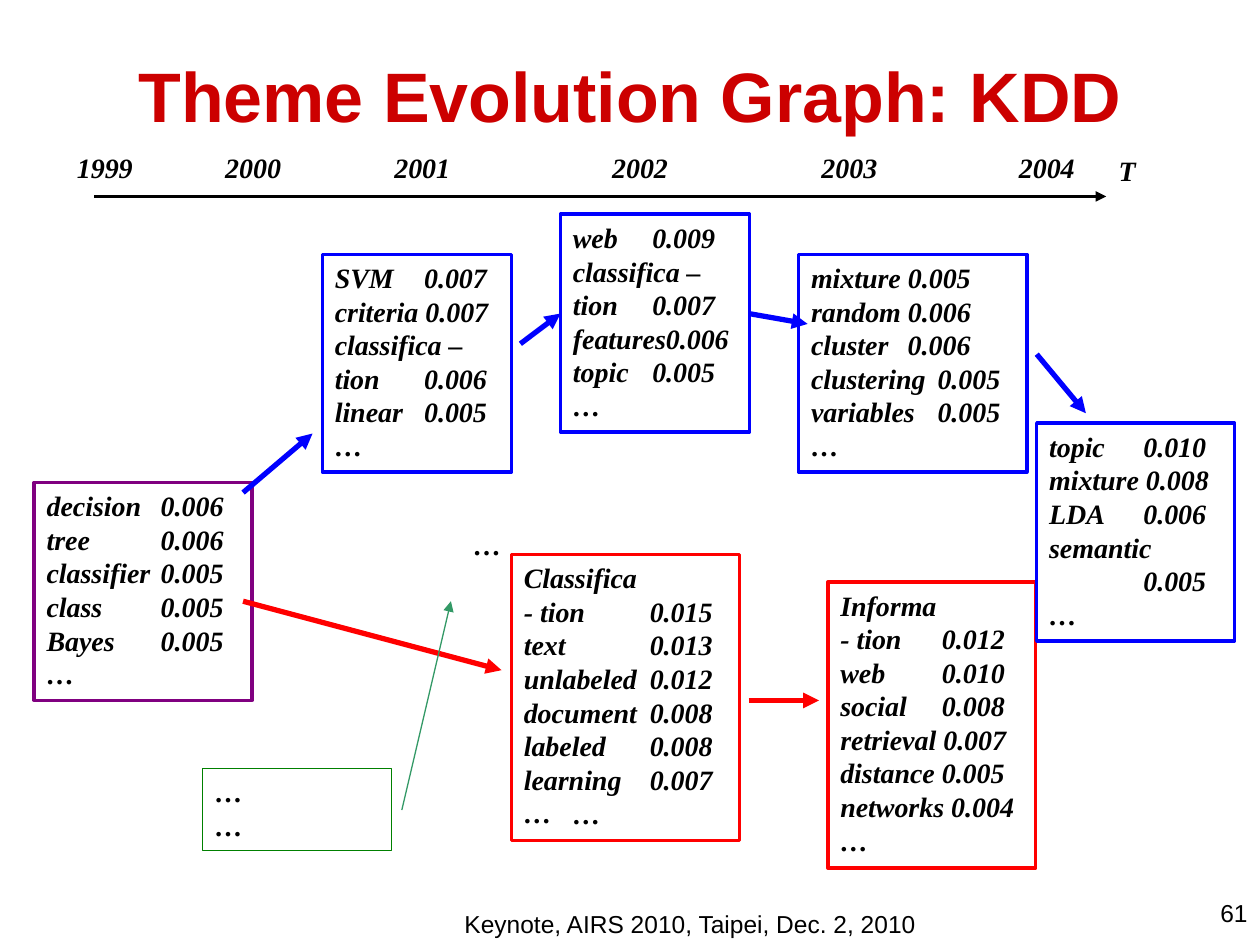
from dataclasses import dataclass

from lxml.etree import SubElement
from pptx import Presentation
from pptx.dml.color import RGBColor
from pptx.enum.shapes import MSO_CONNECTOR, MSO_SHAPE
from pptx.enum.text import MSO_ANCHOR, PP_ALIGN
from pptx.oxml.ns import qn
from pptx.util import Cm, Pt


@dataclass(frozen=True)
class Theme:
    sans: str = "Arial"
    serif: str = "Times New Roman"
    title_size: float = 40
    body_size: float = 16
    footer_size: float = 14
    leading: float = 19.2
    title: str = "CC0000"
    black: str = "000000"
    blue: str = "0000FF"
    purple: str = "800080"
    red: str = "FF0000"
    green: str = "008000"
    teal: str = "339966"


T = Theme()

# Year labels: text, left
YEARS = [("1999", 1.3), ("2000", 4.29), ("2001", 7.7),
         ("2002", 12.09), ("2003", 16.31), ("2004", 20.29)]

# Theme boxes: left, top, width, height, colour, line width, tab stops, text
THEMES = [
    (6.5, 5.13, 3.81, 4.39, T.blue, 2, [1.8],
     "SVM\t0.007\ncriteria 0.007\nclassifica – tion\t0.006\nlinear\t0.005\n…"),
    (0.69, 9.73, 4.39, 4.39, T.purple, 2, [2.3],
     "decision\t0.006\ntree\t0.006\nclassifier\t0.005\nclass\t0.005\nBayes\t0.005\n…"),
    (10.31, 11.18, 4.6, 5.77, T.red, 2, [2.54],
     "Classifica\n- tion\t0.015\ntext\t0.013\nunlabeled\t0.012\ndocument\t0.008\n"
     "labeled\t0.008\nlearning\t0.007\n…"),
    (16.69, 11.73, 4.19, 5.77, T.red, 2, [2.05],
     "Informa\n- tion\t0.012\nweb\t0.010\nsocial\t0.008\nretrieval 0.007\n"
     "distance 0.005\nnetworks 0.004\n…"),
    (4.09, 15.49, 3.81, 1.65, T.green, 0.75, [], "…\n…"),
    (11.3, 4.32, 3.81, 4.39, T.blue, 2, [1.6],
     "web\t0.009\nclassifica –tion\t0.007\nfeatures0.006\ntopic\t0.005\n…"),
    (16.1, 5.13, 4.6, 4.39, T.blue, 2, [1.95, 2.55],
     "mixture 0.005\nrandom 0.006\ncluster\t0.006\nclustering\t0.005\n"
     "variables\t0.005\n…"),
    (20.9, 8.53, 3.99, 4.39, T.blue, 2, [1.9],
     "topic\t0.010\nmixture 0.008\nLDA\t0.006\nsemantic\n\t0.005\n…"),
]

# Arrows: x1, y1, x2, y2, colour, width
ARROWS = [
    (1.9, 3.96, 22.3, 3.96, T.black, 2),
    (4.9, 9.93, 6.3, 8.74, T.blue, 3),
    (10.49, 6.93, 11.3, 6.32, T.blue, 3),
    (15.09, 6.32, 16.28, 6.53, T.blue, 3),
    (20.9, 7.14, 21.89, 8.33, T.blue, 3),
    (4.9, 12.12, 10.11, 13.51, T.red, 3),
    (15.09, 14.12, 16.51, 14.12, T.red, 3),
    (8.1, 16.33, 9.09, 12.12, T.teal, 0.75),
]


def rgb(value):
    return RGBColor.from_string(value)


def write(s, text, font=T.serif, size=T.body_size, color=T.black, bold=True,
          italic=True, align=PP_ALIGN.LEFT, anchor=MSO_ANCHOR.TOP,
          wrap=True, leading=None, tabs=()):
    """Fill a shape with one paragraph per line of text."""
    tf = s.text_frame
    tf.word_wrap = wrap
    tf.vertical_anchor = anchor
    for i, line in enumerate(text.split("\n")):
        p = tf.add_paragraph() if i else tf.paragraphs[0]
        p.alignment = align
        if leading:
            p.line_spacing = Pt(leading)
        if tabs and "\t" in line:
            tab_list = SubElement(p._p.get_or_add_pPr(), qn("a:tabLst"))
            for pos in tabs:
                SubElement(tab_list, qn("a:tab"), pos=str(Cm(pos)), algn="l")
        r = p.add_run()
        r.text = line
        r.font.name = font
        r.font.size = Pt(size)
        r.font.bold = bold
        r.font.italic = italic
        r.font.color.rgb = rgb(color)


def add_text(slide, x, y, w, h, text, **fmt):
    s = slide.shapes.add_textbox(Cm(x), Cm(y), Cm(w), Cm(h))
    write(s, text, **fmt)


def add_theme_box(slide, x, y, w, h, color, width, tabs, text):
    s = slide.shapes.add_shape(MSO_SHAPE.RECTANGLE, Cm(x), Cm(y), Cm(w), Cm(h))
    s.shadow.inherit = False
    s.fill.background()
    s.line.color.rgb = rgb(color)
    s.line.width = Pt(width)
    write(s, text, tabs=tabs, leading=T.leading)


def add_arrow(slide, x1, y1, x2, y2, color, width):
    s = slide.shapes.add_connector(MSO_CONNECTOR.STRAIGHT,
                                   Cm(x1), Cm(y1), Cm(x2), Cm(y2))
    s.line.color.rgb = rgb(color)
    s.line.width = Pt(width)
    SubElement(s.line._get_or_add_ln(), qn("a:tailEnd"), type="triangle")
    SubElement(s._element.spPr, qn("a:effectLst"))


def main():
    prs = Presentation()
    prs.slide_width, prs.slide_height = Cm(25.4), Cm(19.05)
    slide = prs.slides.add_slide(prs.slide_layouts[6])

    # Title and footer
    add_text(slide, 0, 0.43, 25.4, 2.97, "Theme Evolution Graph: KDD",
             font=T.sans, size=T.title_size, color=T.title, italic=False,
             align=PP_ALIGN.CENTER, anchor=MSO_ANCHOR.MIDDLE)
    footer = dict(font=T.sans, size=T.footer_size, bold=False, italic=False)
    add_text(slide, 8.1, 18.21, 11.63, 1.07, "Keynote, AIRS 2010, Taipei, Dec. 2, 2010",
             align=PP_ALIGN.CENTER, **footer)
    add_text(slide, 20.12, 17.98, 5.28, 1.27, "61", align=PP_ALIGN.RIGHT, **footer)

    # Timeline labels
    for year, x in YEARS:
        add_text(slide, x, 2.92, 2.21, 0.94, year)
    add_text(slide, 22.3, 2.97, 1.4, 0.94, "T")

    # Themes and their evolution
    for box in THEMES:
        add_theme_box(slide, *box)
    for arrow in ARROWS:
        add_arrow(slide, *arrow)

    # Loose ellipses
    add_text(slide, 11.3, 15.93, 4.6, 0.94, "…")
    add_text(slide, 9.3, 10.52, 1.07, 0.94, "…", wrap=False)

    prs.save("out.pptx")


if __name__ == "__main__":
    main()
